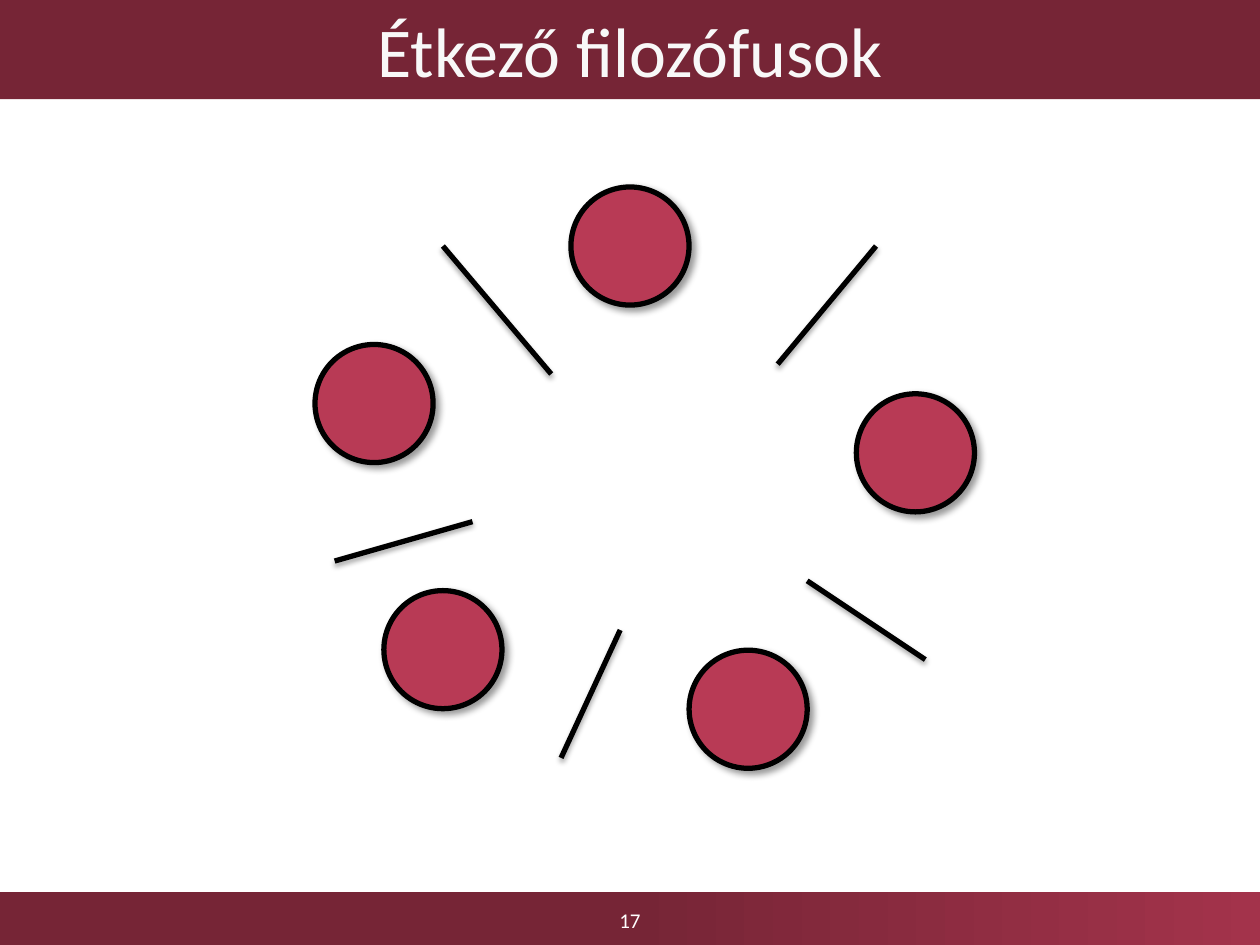
import lxml.etree
import pptx
import pptx.dml.color
import pptx.enum.shapes
import pptx.enum.text
import pptx.oxml.ns
import pptx.util

Pt = pptx.util.Pt
SHAPE = pptx.enum.shapes.MSO_SHAPE
WIDTH, HEIGHT = 720, 540
DIAMETER = 67.5

PHILOSOPHER_CENTRES = [
    (213.75, 230.6), (360, 140.6), (523.1, 258.75), (427.5, 405.3), (253.1, 371.25),
]
FORKS = [
    ((253.1, 140.6), (315, 213.75)),
    ((500.6, 140.6), (444.4, 208.1)),
    ((528.75, 376.9), (461.25, 331.9)),
    ((354.4, 360), (320.6, 433.1)),
    ((270, 298.1), (191.25, 320.6)),
]


def color(value):
    return pptx.dml.color.RGBColor.from_string(value)


def add_shadow(shape, opacity, blur, distance, angle):
    """Add a black outer shadow; call after the outline has been set."""
    qn = pptx.oxml.ns.qn
    properties = shape.element.spPr
    effects = lxml.etree.SubElement(properties, qn("a:effectLst"))
    shadow = lxml.etree.SubElement(
        effects, qn("a:outerShdw"), blurRad=str(Pt(blur)), dist=str(Pt(distance)),
        dir=str(angle * 60000), rotWithShape="0")
    black = lxml.etree.SubElement(shadow, qn("a:srgbClr"), val="000000")
    lxml.etree.SubElement(black, qn("a:alpha"), val=str(opacity * 1000))


class Page:
    font = "Calibri"
    dark, light, disc = "762536", "A3334B", "B83A55"
    ink = "000000"
    line_width = 3

    def __init__(self, deck):
        self.slide = deck.slides.add_slide(deck.slide_layouts[5])
        self.shapes = self.slide.shapes

    def add_text(self, box, text, size, text_color):
        frame = box.text_frame
        frame.word_wrap = True
        frame.vertical_anchor = pptx.enum.text.MSO_ANCHOR.MIDDLE
        para = frame.paragraphs[0]
        para.alignment = pptx.enum.text.PP_ALIGN.CENTER
        span = para.add_run()
        span.text = text
        span.font.name = self.font
        span.font.size = Pt(size)
        span.font.color.rgb = color(text_color)

    def title(self, text, height):
        box = self.shapes.title
        box.left, box.top, box.width, box.height = Pt(0), Pt(0), Pt(WIDTH), Pt(height)
        box.fill.solid()
        box.fill.fore_color.rgb = color(self.dark)
        self.add_text(box, text, 40, "F8F8F8")

    def footer_band(self, height):
        band = self.shapes.add_shape(
            SHAPE.RECTANGLE, Pt(0), Pt(HEIGHT - height), Pt(WIDTH), Pt(height))
        band.shadow.inherit = False
        band.line.fill.background()
        band.fill.gradient()
        band.fill.gradient_angle = 0
        stops = [(0.5, self.dark), (1, self.light)]
        for stop, (position, value) in zip(band.fill.gradient_stops, stops):
            stop.position = position
            stop.color.rgb = color(value)

    def page_number(self, text, height):
        box = self.shapes.add_textbox(Pt(0), Pt(HEIGHT - height), Pt(WIDTH), Pt(height))
        self.add_text(box, text, 12, "FFFFFF")

    def outline(self, shape):
        shape.line.color.rgb = color(self.ink)
        shape.line.width = Pt(self.line_width)

    def philosopher(self, x, y):
        circle = self.shapes.add_shape(
            SHAPE.OVAL, Pt(x - DIAMETER / 2), Pt(y - DIAMETER / 2), Pt(DIAMETER), Pt(DIAMETER))
        circle.fill.solid()
        circle.fill.fore_color.rgb = color(self.disc)
        self.outline(circle)
        add_shadow(circle, 40, 4, 3, 45)

    def fork(self, start, end):
        line = self.shapes.add_connector(
            pptx.enum.shapes.MSO_CONNECTOR.STRAIGHT, *map(Pt, start + end))
        self.outline(line)
        add_shadow(line, 35, 3.1, 1.8, 90)


def main():
    deck = pptx.Presentation()
    deck.slide_width, deck.slide_height = Pt(WIDTH), Pt(HEIGHT)
    page = Page(deck)
    page.footer_band(30.2)
    page.title("Étkező filozófusok", 56.7)
    page.page_number("17", 28)
    for centre in PHILOSOPHER_CENTRES:
        page.philosopher(*centre)
    for start, end in FORKS:
        page.fork(start, end)
    deck.save("out.pptx")


if __name__ == "__main__":
    main()
